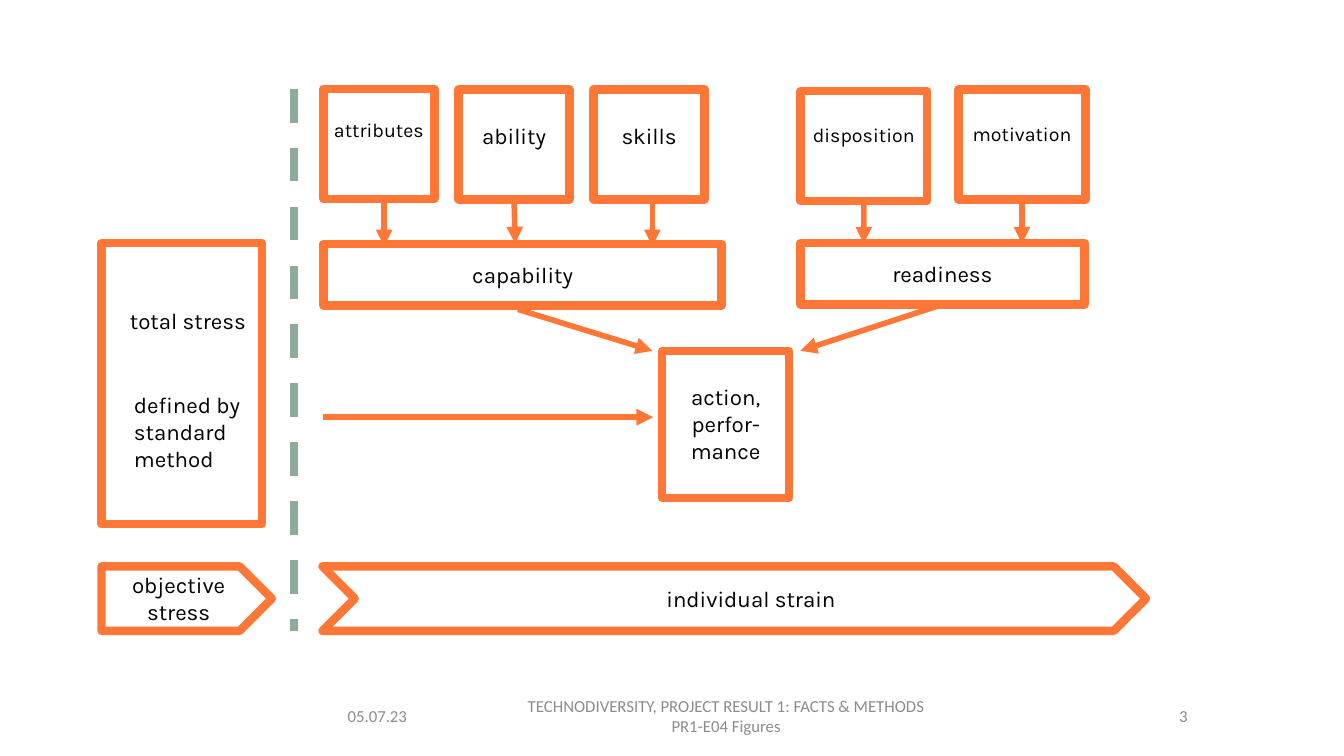
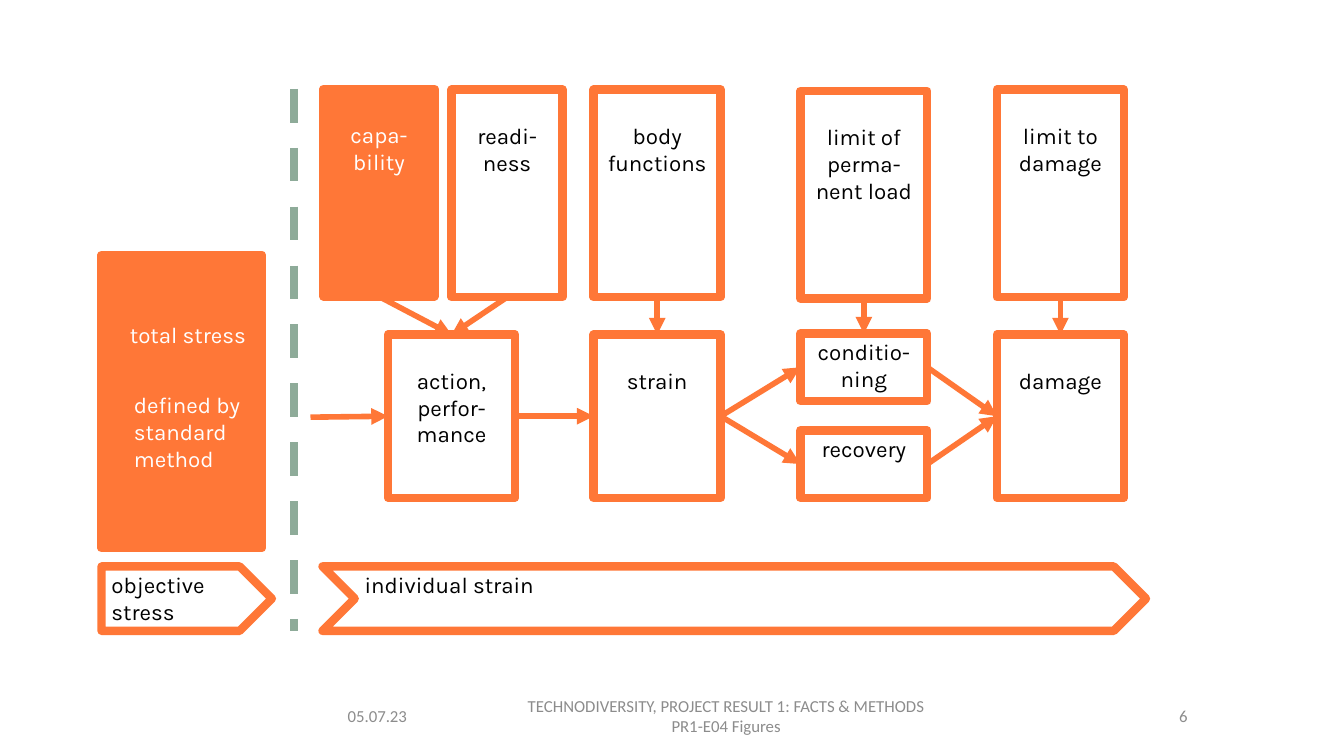
"""Build two flow diagrams on stress, strain and performance."""
from dataclasses import dataclass
from typing import NamedTuple

from lxml import etree
from pptx import Presentation
from pptx.dml.color import RGBColor
from pptx.enum import dml, shapes, text
from pptx.oxml.ns import qn
from pptx.util import Pt

RECTANGLE = shapes.MSO_SHAPE.RECTANGLE
LEFT, CENTER, RIGHT = text.PP_ALIGN.LEFT, text.PP_ALIGN.CENTER, text.PP_ALIGN.RIGHT
TOP, MIDDLE = text.MSO_ANCHOR.TOP, text.MSO_ANCHOR.MIDDLE


@dataclass(frozen=True)
class Theme:
    """Colours, fonts, type sizes, line widths and insets."""
    accent: str = "FF7737"
    divider: str = "8EAB99"
    paper: str = "FFFFFF"
    ink: str = "000000"
    muted: str = "8C8C8C"
    body_font: str = "Karla"
    footer_font: str = "Calibri"
    body_size: float = 16
    small_size: float = 14
    footer_size: float = 12
    outline: float = 6
    arrow: float = 4
    side_inset: float = 7.2
    edge_inset: float = 3.6
    drop: float = 23


THEME = Theme()


class Site(NamedTuple):
    """The middle of a box side: 0 top, 1 left, 2 bottom, 3 right."""
    shape: object
    side: int


def write(shape, lines, size=THEME.body_size, color=THEME.ink, font=THEME.body_font,
          align=CENTER, anchor=TOP, left=THEME.side_inset, top=THEME.edge_inset):
    """Fill a shape with paragraphs of one format."""
    frame = shape.text_frame
    frame.word_wrap = True
    frame.vertical_anchor = anchor
    frame.margin_left, frame.margin_top = Pt(left), Pt(top)
    frame.margin_right, frame.margin_bottom = Pt(THEME.side_inset), Pt(THEME.edge_inset)
    for index, line in enumerate(lines):
        paragraph = frame.add_paragraph() if index else frame.paragraphs[0]
        paragraph.alignment = align
        run = paragraph.add_run()
        run.text = line
        run.font.name = font
        run.font.size = Pt(size)
        run.font.color.rgb = RGBColor.from_string(color)


def add_label(slide, frame, *lines, **style):
    """Add a text box."""
    write(slide.shapes.add_textbox(*map(Pt, frame)), lines, **style)


def add_box(slide, frame, label="", kind=RECTANGLE, filled=False, **style):
    """Add an outlined or filled shape with an optional label."""
    shape = slide.shapes.add_shape(kind, *map(Pt, frame))
    shape.shadow.inherit = False
    shape.fill.solid()
    shape.fill.fore_color.rgb = RGBColor.from_string(THEME.accent if filled else THEME.paper)
    shape.line.color.rgb = RGBColor.from_string(THEME.accent)
    shape.line.width = Pt(THEME.outline)
    if label:
        write(shape, [label], color=THEME.paper if filled else THEME.ink, **style)
    return shape


def locate(end):
    """Return the position of a site or of a point in points."""
    if not isinstance(end, Site):
        return tuple(map(Pt, end))
    shape, side = end
    across, down = ((0.5, 0), (0, 0.5), (0.5, 1), (1, 0.5))[side]
    return int(shape.left + across * shape.width), int(shape.top + down * shape.height)


def add_line(slide, start, finish, color, width):
    """Add a straight connector, joined wherever an end is a site."""
    line = slide.shapes.add_connector(shapes.MSO_CONNECTOR.STRAIGHT, *locate(start), *locate(finish))
    if isinstance(start, Site):
        line.begin_connect(*start)
    if isinstance(finish, Site):
        line.end_connect(*finish)
    line.line.color.rgb = RGBColor.from_string(color)
    line.line.width = Pt(width)
    etree.SubElement(line.element.spPr, qn("a:effectLst"))
    return line


def add_arrow(slide, start, finish):
    """Add an accent arrow."""
    arrow = add_line(slide, start, finish, THEME.accent, THEME.arrow)
    outline = arrow.element.spPr.find(qn("a:ln"))
    etree.SubElement(outline, qn("a:tailEnd"), type="triangle")


def add_stress(slide, top, height, label_top, filled=False):
    """Add the total stress box with its two labels."""
    add_box(slide, (72.5, top, 114.5, height), filled=filled)
    color = THEME.paper if filled else THEME.ink
    add_label(slide, (85.7, label_top, 102.2, 26), "total stress", color=color, align=LEFT)
    add_label(slide, (88.6, 275.8, 102.2, 65.5), "defined by standard method",
              color=color, align=LEFT)


def add_frame(slide, number, align, **strain_style):
    """Add the divider, the band of stress and strain, and the footer."""
    divider = add_line(slide, (210.2, 63.5), (210.2, 450.7), THEME.divider, THEME.outline)
    divider.line.dash_style = dml.MSO_LINE.DASH
    add_box(slide, (72.5, 404.6, 121.7, 46), "objective stress", shapes.MSO_SHAPE.PENTAGON, align=align)
    add_box(slide, (230.4, 404.6, 588.2, 46), "individual strain", shapes.MSO_SHAPE.CHEVRON,
            align=align, **strain_style)
    footer = (
        (241.2, 96.5, LEFT, ["05.07.23"]),
        (350, 337.5, CENTER, ["TECHNODIVERSITY, PROJECT RESULT 1: FACTS & METHODS", "PR1-E04 Figures"]),
        (703.5, 152, RIGHT, [number]),
    )
    for left, width, side, lines in footer:
        add_label(slide, (left, 497, width, 28.8), *lines, size=THEME.footer_size,
                  color=THEME.muted, font=THEME.footer_font, align=side, anchor=MIDDLE)


def build_performance(slide):
    """Draw how capability and readiness lead to performance."""
    add_stress(slide, 173.5, 201, 216)
    add_frame(slide, "3", CENTER, anchor=MIDDLE, left=31)
    small = THEME.small_size
    add_box(slide, (231.1, 63.5, 79.2, 78.5), "attributes", size=small, top=20.4)
    ability = add_box(slide, (327.6, 64, 79.2, 78.5), "ability", top=THEME.drop)
    add_box(slide, (424.1, 64, 79.2, 78.5), "skills", top=THEME.drop)
    disposition = add_box(slide, (571.7, 65, 90.7, 78.5), "disposition", size=small, top=THEME.drop)
    motivation = add_box(slide, (684.7, 64, 90.7, 78.5), "motivation", size=small, top=THEME.drop)
    for source, x in ((ability, 368), (disposition, 617), (motivation, 730)):
        add_arrow(slide, Site(source, 2), (x, 174))
    add_box(slide, (231.1, 174.2, 284.4, 44), "capability", anchor=MIDDLE)
    readiness = add_box(slide, (571.7, 173.5, 203, 44), "readiness", anchor=MIDDLE)
    add_box(slide, (473, 250.6, 90.7, 105), "action, perfor-mance", top=THEME.drop)
    for x in (274.4, 466):
        add_arrow(slide, (x, 143.5), (x, 176))
    add_arrow(slide, (370, 221), (466, 250.6))
    add_arrow(slide, Site(readiness, 2), (571.7, 250.6))
    add_arrow(slide, (230.4, 298), (466.6, 298))


def build_strain(slide):
    """Draw how performance leads to strain and damage."""
    add_stress(slide, 182, 209.5, 226, filled=True)
    add_frame(slide, "6", LEFT)

    def upper(left, width, label, top=64, **style):
        """Add a box of the upper row."""
        return add_box(slide, (left, top, width, 148.3), label, top=THEME.drop, **style)

    def lower(left, label):
        """Add a box of the lower row."""
        return add_box(slide, (left, 239, 90.7, 116.6), label, top=THEME.drop)

    capability = upper(231.1, 79.2, "capa-bility", 63.5, filled=True)
    readiness = upper(322.6, 79.2, "readi-ness")
    functions = upper(424.1, 90.7, "body functions")
    load_limit = upper(571.7, 90.7, "limit of perma-nent load", 65)
    damage_limit = upper(712.1, 90.7, "limit to damage")
    action = lower(277.2, "action, perfor-mance")
    strain = lower(424.1, "strain")
    damage = lower(712.1, "damage")
    conditioning, recovery = (
        add_box(slide, (571.7, top, 90.7, 48.2), label)
        for top, label in ((238.3, "conditio-ning"), (307.4, "recovery")))

    downward = ((capability, action), (readiness, action), (functions, strain),
                (load_limit, conditioning), (damage_limit, damage))
    for source, target in downward:
        add_arrow(slide, Site(source, 2), Site(target, 0))
    rightward = ((action, strain), (strain, conditioning), (strain, recovery),
                 (conditioning, damage), (recovery, damage))
    for source, target in rightward:
        add_arrow(slide, Site(source, 3), Site(target, 1))
    add_arrow(slide, (221.8, 298), Site(action, 1))


def main():
    """Create the presentation and save it."""
    presentation = Presentation()
    presentation.slide_width, presentation.slide_height = Pt(960), Pt(540)
    for build in (build_performance, build_strain):
        build(presentation.slides.add_slide(presentation.slide_layouts[6]))
    presentation.save("out.pptx")


if __name__ == "__main__":
    main()
